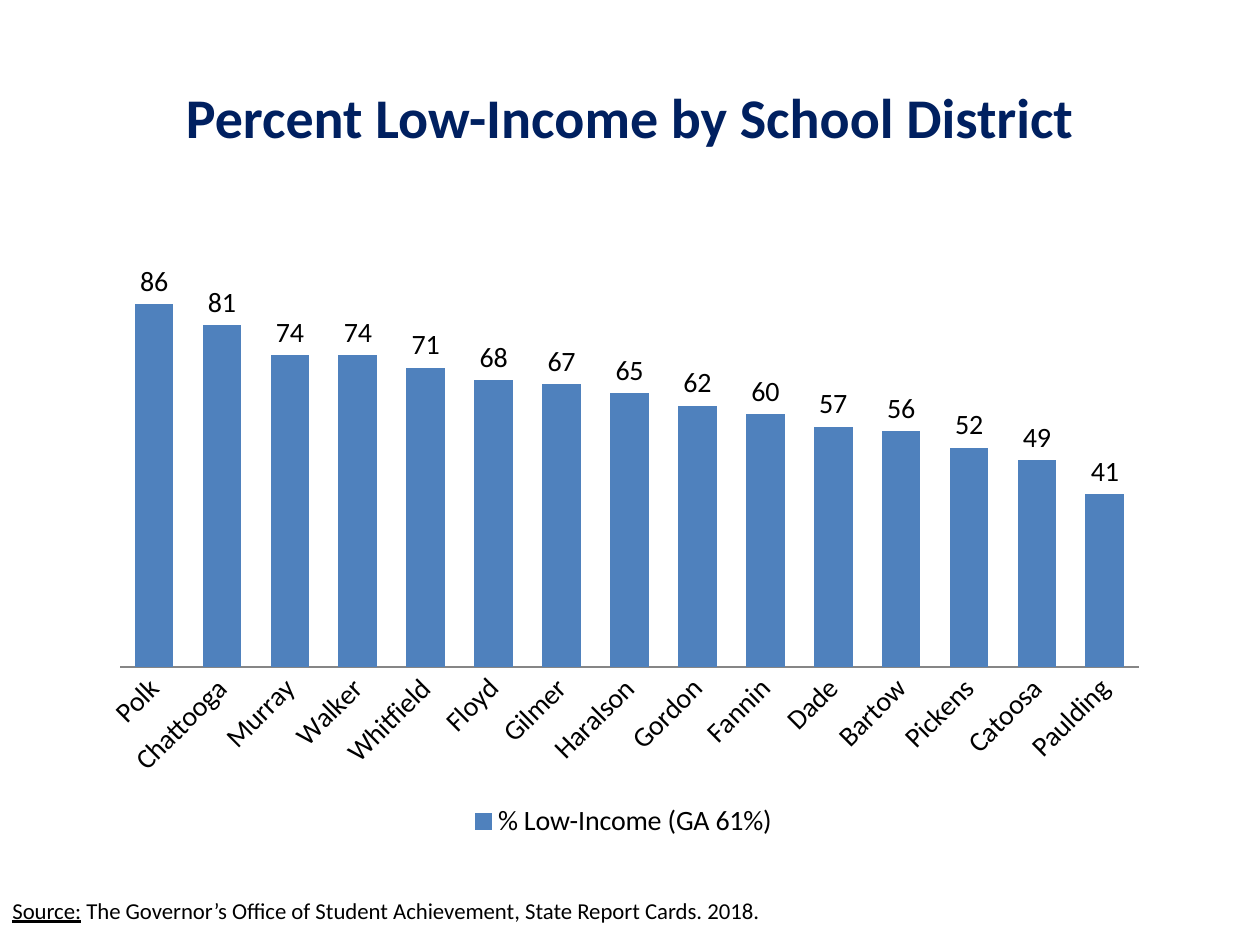
from pptx import Presentation
from pptx.chart.data import CategoryChartData
from pptx.dml.color import RGBColor
from pptx.enum.chart import XL_CHART_TYPE, XL_LABEL_POSITION, XL_LEGEND_POSITION, XL_TICK_MARK
from pptx.enum.text import MSO_ANCHOR, PP_ALIGN
from pptx.util import Cm, Pt

COLUMN = XL_CHART_TYPE.COLUMN_CLUSTERED
OUTSIDE = XL_LABEL_POSITION.OUTSIDE_END
BOTTOM = XL_LEGEND_POSITION.BOTTOM
NO_TICK = XL_TICK_MARK.NONE
MIDDLE = MSO_ANCHOR.MIDDLE
CENTER = PP_ALIGN.CENTER


def paint(code):
    return RGBColor.from_string(code)


def write(para, text, size=13, color="000000", bold=False, line=False):
    run = para.add_run()
    run.text = text
    font = run.font
    font.name = "Calibri"
    font.size = Pt(size)
    font.bold = bold
    font.underline = line
    font.color.rgb = paint(color)


deck = Presentation()
deck.slide_width, deck.slide_height = Cm(25.4), Cm(19.05)
slide = deck.slides.add_slide(deck.slide_layouts[5])

title = slide.shapes.title
title.left, title.top, title.width, title.height = Cm(1.27), Cm(0.76), Cm(22.86), Cm(3.18)
title.text_frame.vertical_anchor = MIDDLE
head = title.text_frame.paragraphs[0]
head.alignment = CENTER
write(head, "Percent Low-Income by School District", size=32, color="002060", bold=True)

note = slide.shapes.add_textbox(Cm(0), Cm(18.14), Cm(22.23), Cm(0.64))
note.text_frame.word_wrap = True
para = note.text_frame.paragraphs[0]
para.line_spacing = 0.6
write(para, "Source:", line=True)
write(para, " The Governor’s Office of Student Achievement, State Report Cards. 2018.")

rates = {
    "Polk": 86, "Chattooga": 81, "Murray": 74, "Walker": 74, "Whitfield": 71,
    "Floyd": 68, "Gilmer": 67, "Haralson": 65, "Gordon": 62, "Fannin": 60,
    "Dade": 57, "Bartow": 56, "Pickens": 52, "Catoosa": 49, "Paulding": 41,
}
data = CategoryChartData(number_format="0")
data.categories = list(rates)
data.add_series("% Low-Income (GA 61%)", list(rates.values()))
frame = slide.shapes.add_chart(COLUMN, Cm(1.75), Cm(4.7), Cm(21.64), Cm(12.32), data)
chart = frame.chart
chart.has_title = False
chart.font.name = "Calibri"
chart.font.size = Pt(10)
chart.font.color.rgb = paint("000000")

chart.has_legend = True
legend = chart.legend
legend.position = BOTTOM
legend.include_in_layout = False

scale = chart.value_axis
scale.visible = False
scale.has_major_gridlines = False
scale.minimum_scale, scale.maximum_scale = 0, 100

names = chart.category_axis
names.major_tick_mark = names.minor_tick_mark = NO_TICK
names.format.line.color.rgb = paint("868686")
names.format.line.width = Pt(0.75)

plot = chart.plots[0]
plot.gap_width = 75
plot.vary_by_categories = False
bars = plot.series[0]
bars.format.fill.solid()
bars.format.fill.fore_color.rgb = paint("4F81BD")
labels = bars.data_labels
labels.show_value = True
labels.number_format = "0"
labels.number_format_is_linked = False
labels.position = OUTSIDE

for font in (legend.font, names.tick_labels.font, labels.font):
    font.name = "Calibri"
    font.size = Pt(16)
    font.color.rgb = paint("000000")
names._element.txPr.bodyPr.set("rot", "-2700000")

deck.save("out.pptx")
